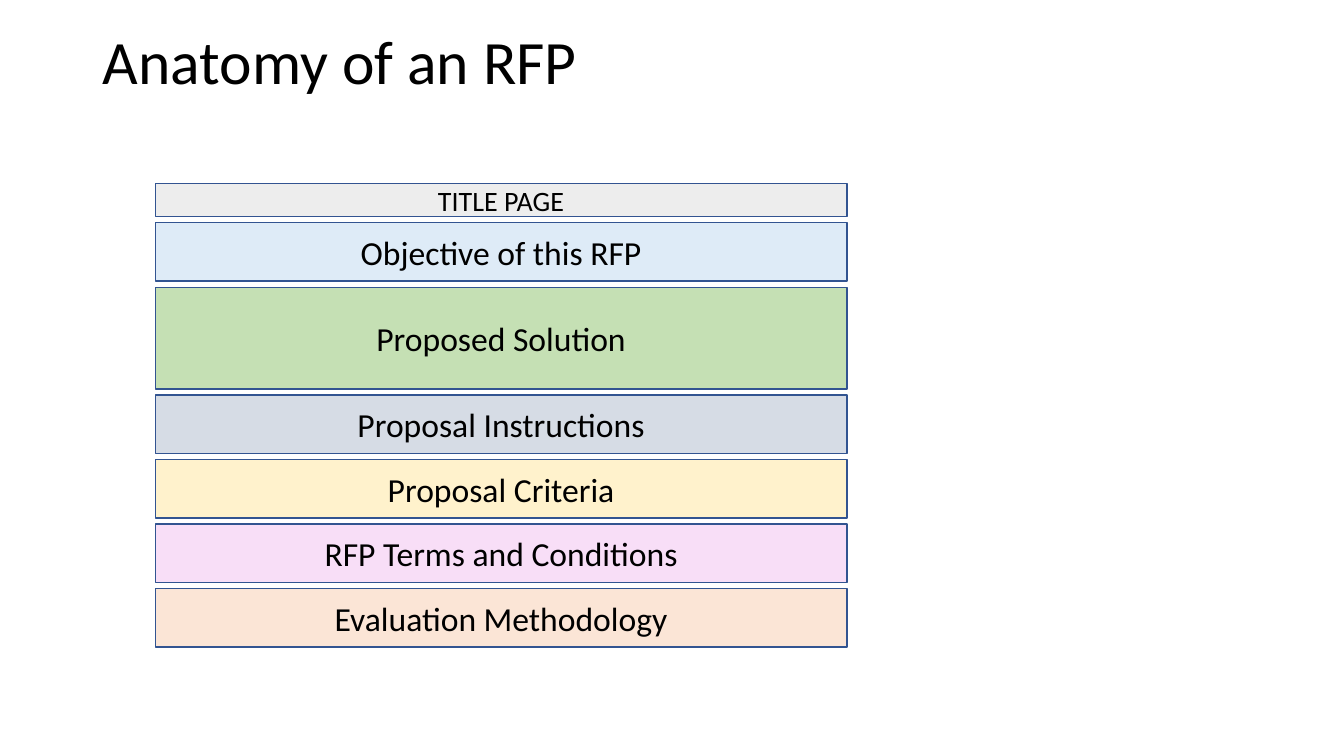
from pptx import Presentation
from pptx.dml.color import RGBColor
from pptx.enum.shapes import MSO_SHAPE
from pptx.enum.text import MSO_ANCHOR, PP_ALIGN
from pptx.util import Inches, Pt

BLACK = RGBColor(0x00, 0x00, 0x00)
OUTLINE = RGBColor(0x32, 0x54, 0x91)
GREY = RGBColor(0xED, 0xED, 0xED)
BLUE = RGBColor(0xDE, 0xEB, 0xF7)
GREEN = RGBColor(0xC5, 0xE0, 0xB4)
SLATE = RGBColor(0xD6, 0xDC, 0xE5)
YELLOW = RGBColor(0xFF, 0xF2, 0xCC)
PINK = RGBColor(0xF8, 0xDE, 0xF7)
PEACH = RGBColor(0xFB, 0xE5, 0xD6)

THIN, REGULAR, TALL = 0.33, 0.58, 1.01
HEADING = "Anatomy of an RFP"
SECTIONS = [
    ("TITLE PAGE", THIN, 20, GREY),
    ("Objective of this RFP", REGULAR, 24, BLUE),
    ("Proposed Solution", TALL, 24, GREEN),
    ("Proposal Instructions", REGULAR, 24, SLATE),
    ("Proposal Criteria", REGULAR, 24, YELLOW),
    ("RFP Terms and Conditions", REGULAR, 24, PINK),
    ("Evaluation Methodology", REGULAR, 24, PEACH),
]
STACK_LEFT, STACK_TOP, STACK_WIDTH, GAP = 1.54, 1.82, 6.86, 0.06


def write(shape, text, size, align):
    frame = shape.text_frame
    frame.word_wrap = True
    frame.vertical_anchor = MSO_ANCHOR.MIDDLE
    paragraph = frame.paragraphs[0]
    paragraph.alignment = align
    run = paragraph.add_run()
    run.text = text
    run.font.name = "Calibri"
    run.font.size = Pt(size)
    run.font.color.rgb = BLACK
    return paragraph


def main():
    deck = Presentation()
    deck.slide_width, deck.slide_height = Inches(13.33), Inches(7.5)
    slide = deck.slides.add_slide(deck.slide_layouts[5])

    heading = slide.shapes.title
    heading.left, heading.top = Inches(0.92), Inches(0)
    heading.width, heading.height = Inches(11.5), Inches(1.28)
    write(heading, HEADING, 44, PP_ALIGN.LEFT).line_spacing = 0.9

    top = STACK_TOP
    for label, height, size, color in SECTIONS:
        section = slide.shapes.add_shape(
            MSO_SHAPE.RECTANGLE, Inches(STACK_LEFT), Inches(top),
            Inches(STACK_WIDTH), Inches(height))
        section.shadow.inherit = False
        section.fill.solid()
        section.fill.fore_color.rgb = color
        section.line.color.rgb = OUTLINE
        section.line.width = Pt(1)
        write(section, label, size, PP_ALIGN.CENTER)
        top += height + GAP

    deck.save("out.pptx")


if __name__ == "__main__":
    main()
